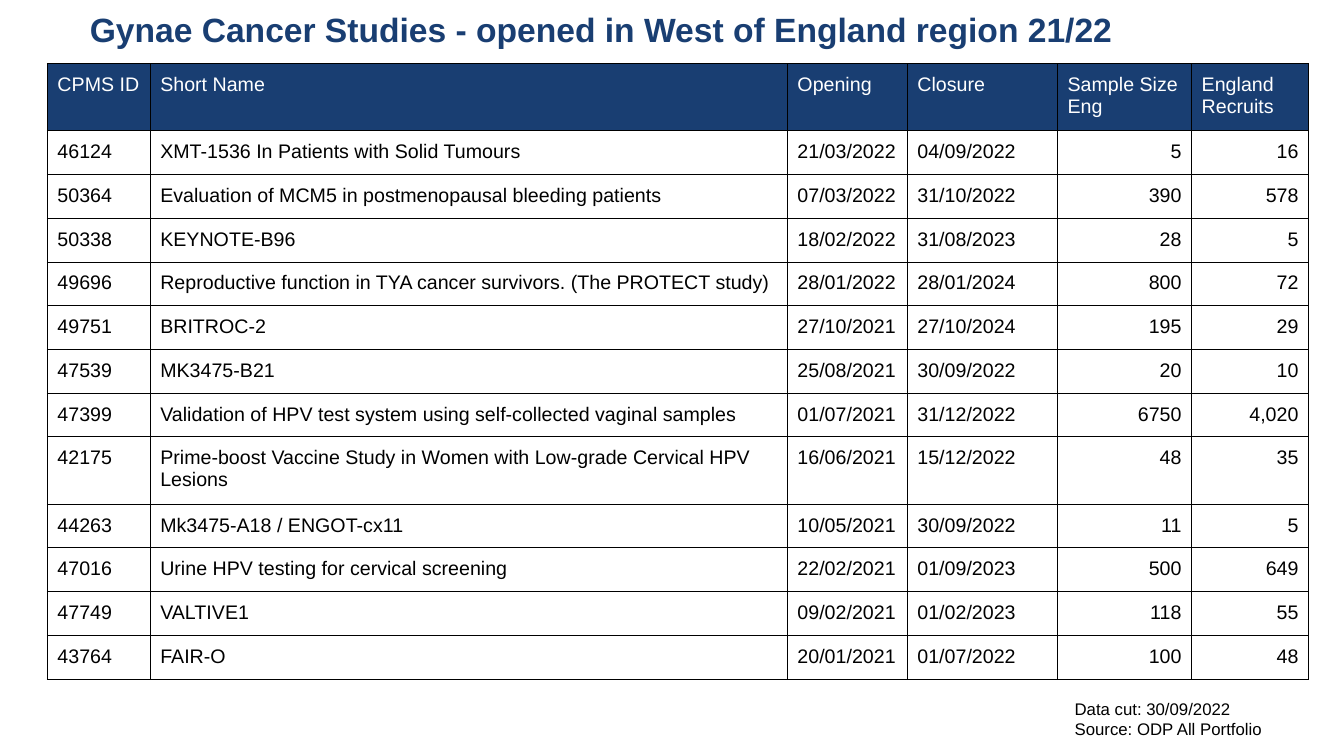
import pptx
import pptx.util
import pptx.dml.color
import pptx.enum.text
import lxml.etree
from pptx.util import Inches

HUES = {"navy": "193E72", "white": "FFFFFF", "black": "000000"}
LEFT = pptx.enum.text.PP_ALIGN.LEFT
RIGHT = pptx.enum.text.PP_ALIGN.RIGHT


def write(frame, text, size=14, hue="black", bold=False, align=LEFT, space=None):
    frame.word_wrap = True
    frame.text = text
    for para in frame.paragraphs:
        para.alignment = align
        para.line_spacing = space
        font = para.font
        font.name = "Arial"
        font.size = pptx.util.Pt(size)
        font.bold = bold
        font.color.rgb = pptx.dml.color.RGBColor.from_string(HUES[hue])


def border(cell):
    props = cell._tc.get_or_add_tcPr()
    space = "http://schemas.openxmlformats.org/drawingml/2006/main"
    for rank, side in enumerate(("lnL", "lnR", "lnT", "lnB")):
        line = lxml.etree.Element(f"{{{space}}}{side}", w=str(pptx.util.Pt(0.75)))
        fill = lxml.etree.SubElement(line, f"{{{space}}}solidFill")
        lxml.etree.SubElement(fill, f"{{{space}}}srgbClr", val=HUES["black"])
        props.insert(rank, line)


deck = pptx.Presentation()
deck.slide_width = Inches(13.33)
deck.slide_height = Inches(7.5)
slide = deck.slides.add_slide(deck.slide_layouts[5])

title = slide.shapes.title
title.left, title.top = Inches(0.79), Inches(0)
title.width, title.height = Inches(11.5), Inches(0.63)
title.text_frame.vertical_anchor = pptx.enum.text.MSO_ANCHOR.MIDDLE
write(title.text_frame, "Gynae Cancer Studies - opened in West of England region 21/22",
      size=24, hue="navy", bold=True, space=0.9)

note = slide.shapes.add_textbox(Inches(10.56), Inches(6.83), Inches(2.8), Inches(0.61))
frame = note.text_frame
frame.margin_top = frame.margin_bottom = Inches(0.1)
write(frame, "Data cut: 30/09/2022\nSource: ODP All Portfolio", size=12)
frame.auto_size = pptx.enum.text.MSO_AUTO_SIZE.SHAPE_TO_FIT_TEXT

rows = [
    ("CPMS ID", "Short Name", "Opening", "Closure", "Sample Size Eng", "England Recruits"),
    ("46124", "XMT-1536 In Patients with Solid Tumours", "21/03/2022", "04/09/2022", "5", "16"),
    ("50364", "Evaluation of MCM5 in postmenopausal bleeding patients",
     "07/03/2022", "31/10/2022", "390", "578"),
    ("50338", "KEYNOTE-B96", "18/02/2022", "31/08/2023", "28", "5"),
    ("49696", "Reproductive function in TYA cancer survivors. (The PROTECT study)",
     "28/01/2022", "28/01/2024", "800", "72"),
    ("49751", "BRITROC-2", "27/10/2021", "27/10/2024", "195", "29"),
    ("47539", "MK3475-B21", "25/08/2021", "30/09/2022", "20", "10"),
    ("47399", "Validation of HPV test system using self-collected vaginal samples",
     "01/07/2021", "31/12/2022", "6750", "4,020"),
    ("42175", "Prime-boost Vaccine Study in Women with Low-grade Cervical HPV Lesions",
     "16/06/2021", "15/12/2022", "48", "35"),
    ("44263", "Mk3475-A18 / ENGOT-cx11", "10/05/2021", "30/09/2022", "11", "5"),
    ("47016", "Urine HPV testing for cervical screening", "22/02/2021", "01/09/2023", "500", "649"),
    ("47749", "VALTIVE1", "09/02/2021", "01/02/2023", "118", "55"),
    ("43764", "FAIR-O", "20/01/2021", "01/07/2022", "100", "48"),
]
widths = [1.02, 6.32, 1.19, 1.49, 1.33, 1.16]
tall = (0, 8)
highs = [0.66 if r in tall else 0.43 for r in range(len(rows))]

table = slide.shapes.add_table(len(rows), len(widths), Inches(0.47), Inches(0.63),
                               Inches(sum(widths)), Inches(sum(highs))).table
table.horz_banding = False
for c, width in enumerate(widths):
    table.columns[c].width = Inches(width)

for r, row in enumerate(rows):
    table.rows[r].height = Inches(highs[r])
    head = r == 0
    for c, text in enumerate(row):
        cell = table.cell(r, c)
        cell.margin_left = cell.margin_right = Inches(0.1)
        cell.margin_top = cell.margin_bottom = Inches(0.1)
        cell.fill.solid()
        back = HUES["navy" if head else "white"]
        cell.fill.fore_color.rgb = pptx.dml.color.RGBColor.from_string(back)
        border(cell)
        write(cell.text_frame, text, hue="white" if head else "black",
              align=RIGHT if c > 3 and not head else LEFT)

deck.save("out.pptx")
